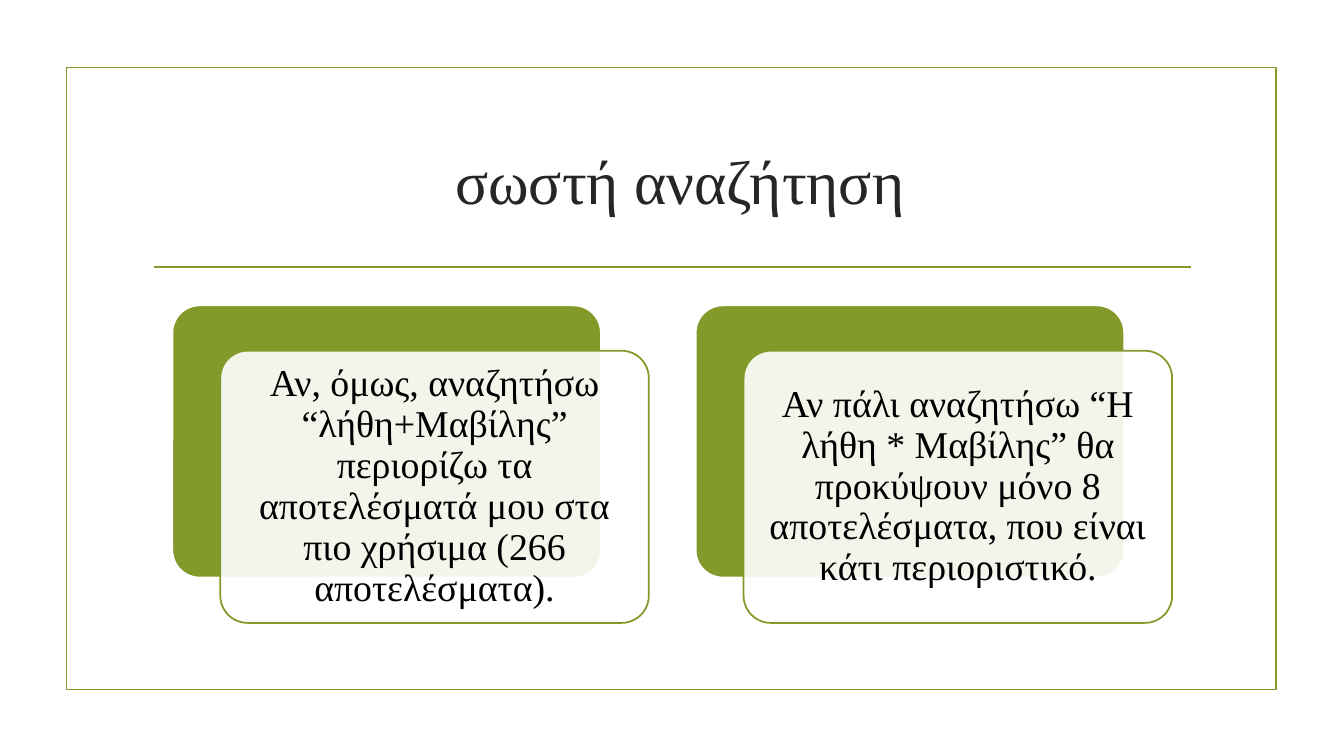
from lxml import etree
from pptx import Presentation
from pptx.dml.color import RGBColor
from pptx.enum import shapes, text
from pptx.oxml import ns
from pptx.util import Inches, Pt

# Content
TITLE = "σωστή αναζήτηση"
CARDS = [
    "Αν, όμως, αναζητήσω “λήθη+Μαβίλης” περιορίζω τα αποτελέσματά μου στα "
    "πιο χρήσιμα (266 αποτελέσματα).",
    "Αν πάλι αναζητήσω “Η λήθη * Μαβίλης” θα προκύψουν μόνο 8 "
    "αποτελέσματα, που είναι κάτι περιοριστικό.",
]
FONT = "Times New Roman"
GREEN, WHITE, BLACK, DARK = "83992A", "FFFFFF", "000000", "262626"

# Card layout, in inches
CARD_LEFT, CARD_TOP, CARD_STEP = 1.71, 3.03, 5.19
CARD_WIDTH, CARD_HEIGHT = 4.25, 2.7
FRONT_DX, FRONT_DY = 0.475, 0.45
TEXT_INSET = 0.08
LINE_WIDTH = 1.25

deck = Presentation()
deck.slide_width, deck.slide_height = Inches(13.33), Inches(7.5)
page = deck.slides.add_slide(deck.slide_layouts[6])


def color(value):
    return RGBColor.from_string(value)


def add_panel(kind, left, top, width, height, line, fill=None, alpha=None):
    panel = page.shapes.add_shape(
        kind, Inches(left), Inches(top), Inches(width), Inches(height))
    panel.shadow.inherit = False
    panel.line.color.rgb = color(line)
    panel.line.width = Pt(LINE_WIDTH)
    if fill is None:
        panel.fill.background()
    else:
        panel.fill.solid()
        panel.fill.fore_color.rgb = color(fill)
    if alpha is not None:
        tint = panel.fill._xPr.find(ns.qn("a:solidFill"))[0]
        etree.SubElement(tint, ns.qn("a:alpha"), val=str(alpha * 1000))
    return panel


def add_text(words, left, top, width, height, *, size, ink,
             inset=0.1, left_inset=None, spacing=1.0):
    box = page.shapes.add_textbox(
        Inches(left), Inches(top), Inches(width), Inches(height))
    frame = box.text_frame
    frame.word_wrap = True
    frame.vertical_anchor = text.MSO_ANCHOR.MIDDLE
    frame.margin_left = Inches(inset if left_inset is None else left_inset)
    frame.margin_right = Inches(inset)
    frame.margin_top = frame.margin_bottom = Inches(inset / 2 if size > 40 else inset)
    para = frame.paragraphs[0]
    para.alignment = text.PP_ALIGN.CENTER
    para.line_spacing = spacing
    span = para.add_run()
    span.text = words
    span.font.name = FONT
    span.font.size = Pt(size)
    span.font.color.rgb = color(ink)


# Frame and rule under the title
add_panel(shapes.MSO_SHAPE.RECTANGLE, 0.66, 0.67, 12, 6.17, GREEN)
rule = page.shapes.add_connector(
    shapes.MSO_CONNECTOR.STRAIGHT,
    Inches(1.53), Inches(2.65), Inches(11.81), Inches(2.65))
rule.line.color.rgb = color(GREEN)
rule.line.width = Pt(LINE_WIDTH)
etree.SubElement(rule._element.spPr, ns.qn("a:effectLst"))

# Title
add_text(TITLE, 1.42, 1.07, 10.5, 1.43, size=44, ink=DARK, left_inset=0.25)

# Cards: a green back, a translucent front, and the words
for index, words in enumerate(CARDS):
    left = CARD_LEFT + index * CARD_STEP
    front_left, front_top = left + FRONT_DX, CARD_TOP + FRONT_DY
    back = add_panel(shapes.MSO_SHAPE.ROUNDED_RECTANGLE, left, CARD_TOP,
                     CARD_WIDTH, CARD_HEIGHT, WHITE, GREEN)
    front = add_panel(shapes.MSO_SHAPE.ROUNDED_RECTANGLE, front_left, front_top,
                      CARD_WIDTH, CARD_HEIGHT, GREEN, WHITE, alpha=90)
    for panel in (back, front):
        panel.adjustments[0] = 0.1
    add_text(words, front_left + TEXT_INSET, front_top + TEXT_INSET,
             CARD_WIDTH - 2 * TEXT_INSET, CARD_HEIGHT - 2 * TEXT_INSET,
             size=27, ink=BLACK, inset=0.11, spacing=0.9)

deck.save("out.pptx")
